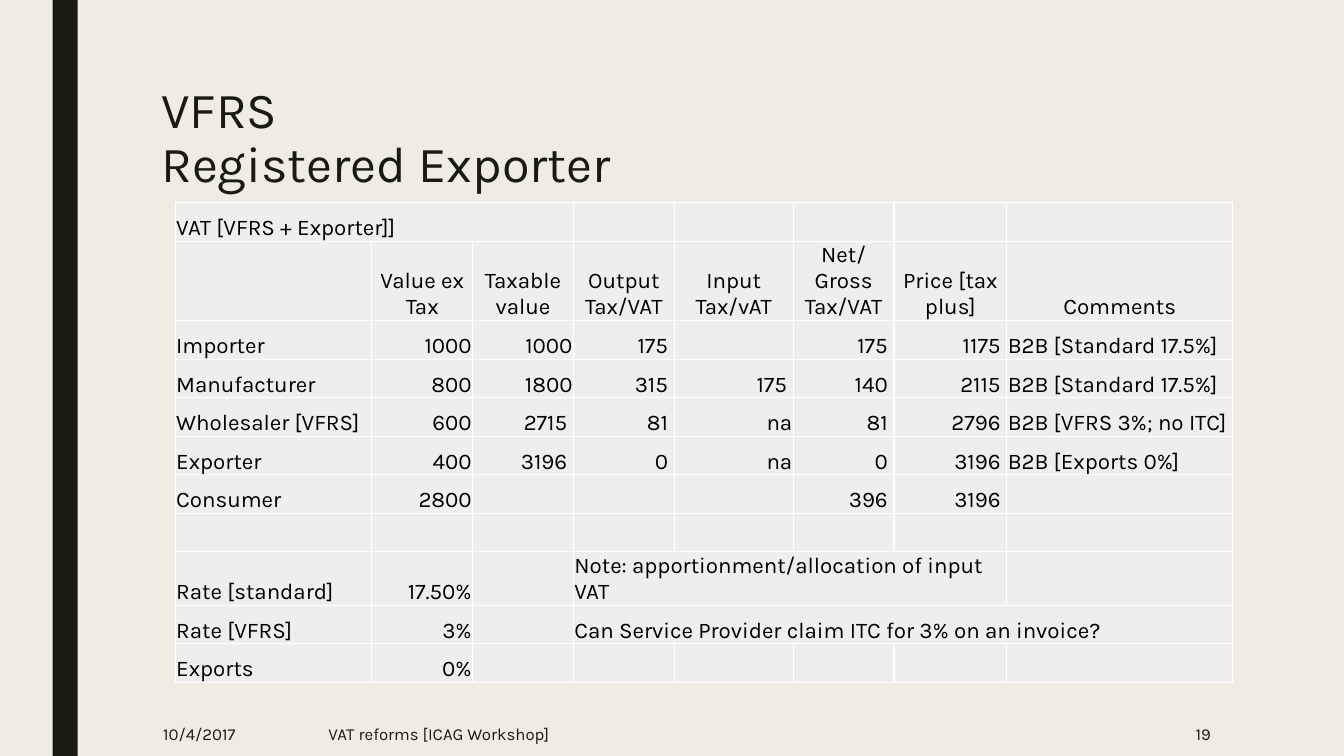
from lxml.etree import SubElement
from pptx import Presentation
from pptx.dml.color import RGBColor
from pptx.enum.shapes import MSO_SHAPE as Shape
from pptx.enum.text import MSO_ANCHOR as Anchor, PP_ALIGN as Align
from pptx.oxml.ns import qn
from pptx.util import Pt

CREAM = RGBColor(0xEF, 0xED, 0xE3)
DARK = RGBColor(0x19, 0x1B, 0x0E)
CELL_GREY = RGBColor(0xEE, 0xEE, 0xED)
BLACK = RGBColor(0, 0, 0)
BORDER_HEX = "FFFFFF"
FONT = "Karla"

COLUMN_WIDTHS = [140.4, 72, 72, 72, 85, 72, 80.6, 161.3]
ROW_HEIGHT, HEADER_HEIGHT = 27.55, 55
HEADER_ROW = 1
COMMENTS_COLUMN = len(COLUMN_WIDTHS) - 1
ROWS = [
    ["VAT [VFRS + Exporter]]"],
    ["", "Value ex Tax", "Taxable value", "Output Tax/VAT", "Input Tax/vAT",
     "Net/Gross Tax/VAT", "Price [tax plus]", "Comments"],
    ["Importer", "1000", "1000", "175 ", "", "175 ", "1175 ", "B2B [Standard 17.5%]"],
    ["Manufacturer", "800", "1800", "315 ", "175 ", "140 ", "2115 ", "B2B [Standard 17.5%]"],
    ["Wholesaler [VFRS]", "600", "2715 ", "81 ", "na", "81 ", "2796 ", "B2B [VFRS 3%; no ITC]"],
    ["Exporter", "400", "3196 ", "0 ", "na", "0 ", "3196 ", "B2B [Exports 0%]"],
    ["Consumer", "2800", "", "", "", "396 ", "3196 "],
    [],
    ["Rate [standard]", "17.50%", "", "Note: apportionment/allocation of input VAT"],
    ["Rate [VFRS]", "3%", "", "Can Service Provider claim ITC for 3% on an invoice?"],
    ["Exports", "0%"],
]
# (row, first column) -> last column
MERGES = {(0, 0): 2, (8, 3): 6, (9, 3): 7}


def format_text(frame, size, color, align=Align.LEFT):
    for para in frame.paragraphs:
        para.alignment = align
        para.font.size = Pt(size)
        for run in para.runs:
            run.font.name = FONT
            run.font.size = Pt(size)
            run.font.color.rgb = color


def add_side_bar(slide, left, top, width, height):
    bar = slide.shapes.add_shape(Shape.RECTANGLE, Pt(left), Pt(top), Pt(width), Pt(height))
    bar.shadow.inherit = False
    bar.fill.solid()
    bar.fill.fore_color.rgb = DARK
    bar.line.fill.background()


def fill_title(slide, left, top, width, height):
    title = slide.shapes.title
    title.left, title.top, title.width, title.height = Pt(left), Pt(top), Pt(width), Pt(height)
    frame = title.text_frame
    frame.text = "VFRS\vRegistered Exporter"
    frame.vertical_anchor = Anchor.MIDDLE
    frame.paragraphs[0].line_spacing = 0.89
    format_text(frame, 36, DARK)


def add_borders(cell):
    properties = cell._tc.get_or_add_tcPr()
    for position, side in enumerate(("a:lnL", "a:lnR", "a:lnT", "a:lnB")):
        line = properties.makeelement(qn(side), {"w": str(Pt(1))})
        fill = SubElement(line, qn("a:solidFill"))
        SubElement(fill, qn("a:srgbClr"), val=BORDER_HEX)
        properties.insert(position, line)


def cell_alignment(row, column):
    if row == HEADER_ROW:
        return Align.CENTER
    if column in (0, COMMENTS_COLUMN) or (row, column) in MERGES:
        return Align.LEFT
    return Align.RIGHT


def format_cell(cell, text, align):
    cell.fill.solid()
    cell.fill.fore_color.rgb = CELL_GREY
    cell.vertical_anchor = Anchor.BOTTOM
    cell.margin_left = cell.margin_right = cell.margin_top = Pt(0.7)
    cell.margin_bottom = Pt(0)
    cell.text = text
    format_text(cell.text_frame, 16, BLACK, align)
    add_borders(cell)


def add_vat_table(slide, left, top):
    heights = [HEADER_HEIGHT if row == HEADER_ROW else ROW_HEIGHT for row in range(len(ROWS))]
    table = slide.shapes.add_table(
        len(ROWS), len(COLUMN_WIDTHS), Pt(left), Pt(top),
        Pt(sum(COLUMN_WIDTHS)), Pt(sum(heights))).table
    table.first_row = table.horz_banding = False
    for column, width in zip(table.columns, COLUMN_WIDTHS):
        column.width = Pt(width)
    for row, height in enumerate(heights):
        table.rows[row].height = Pt(height)
        for column in range(len(COLUMN_WIDTHS)):
            text = ROWS[row][column] if column < len(ROWS[row]) else ""
            format_cell(table.cell(row, column), text, cell_alignment(row, column))
    for (row, first), last in MERGES.items():
        table.cell(row, first).merge(table.cell(row, last))


def add_footer(slide, top, height):
    for text, left, width, align in (
        ("10/4/2017", 109.4, 95, Align.LEFT),
        ("VAT reforms [ICAG Workshop]", 227.5, 494.6, Align.LEFT),
        ("19", 746, 126, Align.RIGHT),
    ):
        box = slide.shapes.add_textbox(Pt(left), Pt(top), Pt(width), Pt(height))
        frame = box.text_frame
        frame.word_wrap = True
        frame.vertical_anchor = Anchor.MIDDLE
        frame.text = text
        format_text(frame, 12, DARK, align)


def main():
    deck = Presentation()
    deck.slide_width, deck.slide_height = Pt(960), Pt(540)
    slide = deck.slides.add_slide(deck.slide_layouts[5])
    slide.background.fill.solid()
    slide.background.fill.fore_color.rgb = CREAM
    add_side_bar(slide, 37.5, 0, 18, 540)
    fill_title(slide, 108, 54, 756, 90.7)
    add_vat_table(slide, 125.2, 144.7)
    add_footer(slide, 508.5, 31.5)
    deck.save("out.pptx")


if __name__ == "__main__":
    main()
